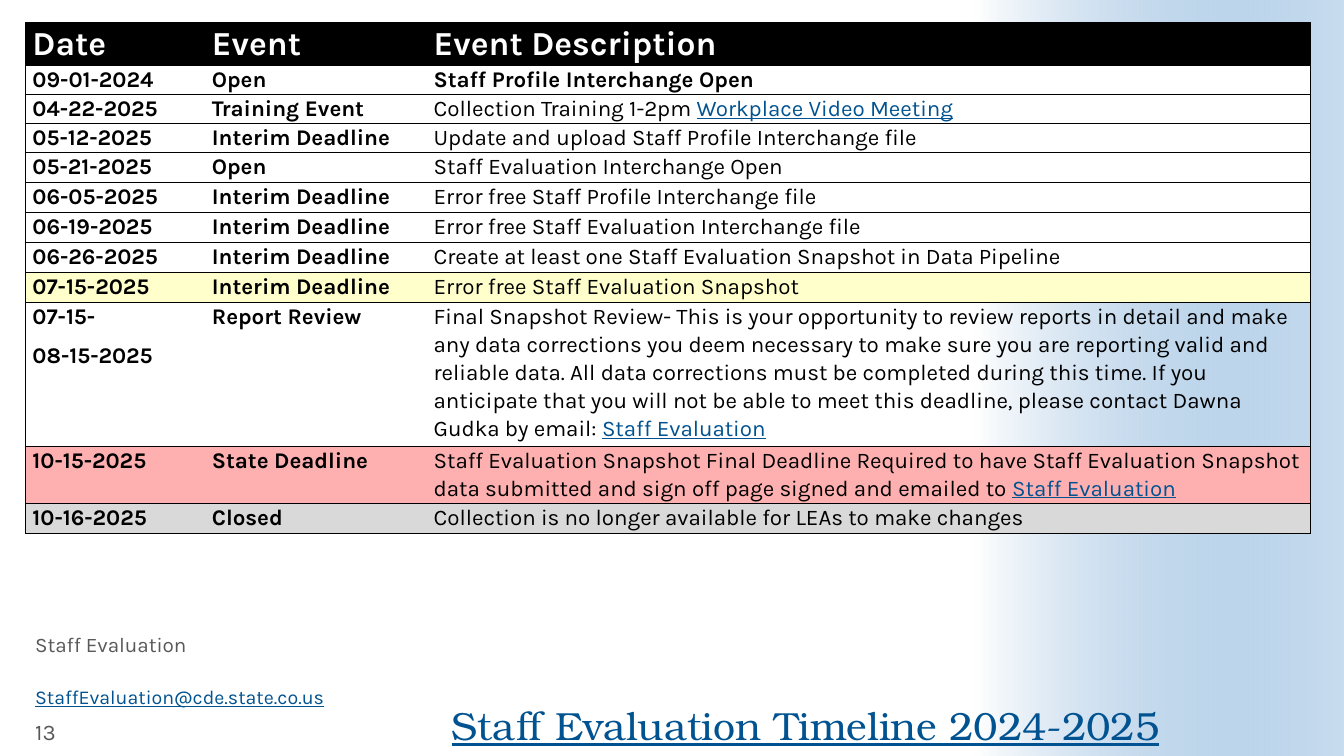
import pptx
import pptx.dml.color
import pptx.enum.shapes
import pptx.enum.text
import pptx.util
from lxml import etree
from pptx.oxml import parse_xml
from pptx.oxml.ns import qn

Pt = pptx.util.Pt
Anchor = pptx.enum.text.MSO_ANCHOR
Align = pptx.enum.text.PP_ALIGN

BODY_FONT, TITLE_FONT = "Karla", "TeX Gyre Bonum"
BLACK, WHITE, GREY, LINK = "000000", "FFFFFF", "595959", "005390"
YELLOW, PINK, SILVER = "FFFFCC", "FEB0B0", "D9D9D9"

HEADINGS = ("Date", "Event", "Event Description")
# date, event, description, linked words at the end, row fill, row height
EVENTS = [
    ("09-01-2024", "Open", "Staff Profile Interchange Open", "", WHITE, 20),
    ("04-22-2025", "Training Event", "Collection Training 1-2pm ",
     "Workplace Video Meeting", WHITE, 20),
    ("05-12-2025", "Interim Deadline",
     "Update and upload Staff Profile Interchange file", "", WHITE, 20.5),
    ("05-21-2025", "Open", "Staff Evaluation Interchange Open", "", WHITE, 21.5),
    ("06-05-2025", "Interim Deadline",
     "Error free Staff Profile Interchange file", "", WHITE, 21.5),
    ("06-19-2025", "Interim Deadline",
     "Error free Staff Evaluation Interchange file", "", WHITE, 21.5),
    ("06-26-2025", "Interim Deadline",
     "Create at least one Staff Evaluation Snapshot in Data Pipeline", "", WHITE, 21.5),
    ("07-15-2025", "Interim Deadline", "Error free Staff Evaluation Snapshot", "",
     YELLOW, 21.5),
    ("07-15-\n08-15-2025", "Report Review",
     "Final Snapshot Review- This is your opportunity to review reports in detail and "
     "make any data corrections you deem necessary to make sure you are reporting valid "
     "and reliable data. All data corrections must be completed during this time. If you "
     "anticipate that you will not be able to meet this deadline, please contact Dawna "
     "Gudka by email: ", "Staff Evaluation", None, 100),
    ("10-15-2025", "State Deadline",
     "Staff Evaluation Snapshot Final Deadline Required to have Staff Evaluation Snapshot "
     "data submitted and sign off page signed and emailed to ", "Staff Evaluation",
     PINK, 40),
    ("10-16-2025", "Closed", "Collection is no longer available for LEAs to make changes",
     "", SILVER, 21.5),
]
COLUMN_WIDTHS = (128.2, 158.4, 631.4)
HEADER_HEIGHT = 30.5
TABLE_LEFT, TABLE_TOP = 18, 16


def rgb(value):
    return pptx.dml.color.RGBColor.from_string(value)


def format_run(run, size, color, bold=False, underline=False, font=BODY_FONT):
    run.font.name = font
    run.font.size = Pt(size)
    run.font.bold = bold
    run.font.underline = underline
    run.font.color.rgb = rgb(color)


def add_text(slide, box, text, size, color, font=BODY_FONT, underline=False,
             anchor=Anchor.TOP, align=Align.LEFT, spacing=1.0, inset=None):
    shape = slide.shapes.add_textbox(*map(Pt, box))
    frame = shape.text_frame
    frame.word_wrap = True
    frame.vertical_anchor = anchor
    if inset is not None:
        frame.margin_left = frame.margin_right = Pt(inset)
        frame.margin_top = frame.margin_bottom = Pt(inset)
    frame.text = text
    paragraph = frame.paragraphs[0]
    paragraph.alignment = align
    paragraph.line_spacing = spacing
    format_run(paragraph.runs[0], size, color, underline=underline, font=font)


def add_side_gradient(slide):
    """Right-hand band fading from white to a translucent blue."""
    band = slide.shapes.add_shape(pptx.enum.shapes.MSO_SHAPE.RECTANGLE,
                                  Pt(558), Pt(138.2), Pt(540), Pt(263.6))
    band.rotation = 270
    band.shadow.inherit = False
    band.line.fill.background()
    gradient = parse_xml(
        '<a:gradFill xmlns:a="http://schemas.openxmlformats.org/drawingml/2006/main" '
        'rotWithShape="1"><a:gsLst>'
        '<a:gs pos="0"><a:srgbClr val="FFFFFF"/></a:gs>'
        '<a:gs pos="100000"><a:srgbClr val="488BC9"><a:alpha val="30000"/></a:srgbClr></a:gs>'
        '</a:gsLst><a:lin ang="5400000" scaled="0"/></a:gradFill>')
    band._element.spPr.find(qn("a:prstGeom")).addnext(gradient)


def set_borders(cell, visible_sides):
    properties = cell._tc.get_or_add_tcPr()
    for side in "LRTB":
        line = etree.SubElement(properties, qn("a:ln" + side), w=str(Pt(0.5)))
        if side in visible_sides:
            fill = etree.SubElement(line, qn("a:solidFill"))
            etree.SubElement(fill, qn("a:srgbClr"), val=BLACK)
        else:
            etree.SubElement(line, qn("a:noFill"))


def fill_cell(cell, column, text, link, fill, size, color, bold, space_after):
    cell.margin_left = cell.margin_right = Pt(5.2)
    cell.margin_top = cell.margin_bottom = 0
    set_borders(cell, {0: "LTB", 1: "TB", 2: "RTB"}[column])
    if fill:
        cell.fill.solid()
        cell.fill.fore_color.rgb = rgb(fill)
    else:
        cell.fill.background()
    cell.text_frame.text = text
    for paragraph in cell.text_frame.paragraphs:
        paragraph.line_spacing = 1.07
        paragraph.space_after = Pt(space_after)
        format_run(paragraph.runs[0], size, color, bold)
    if link:
        run = paragraph.add_run()
        run.text = link
        format_run(run, size, LINK, underline=True)


def add_timeline(slide):
    heights = [HEADER_HEIGHT] + [event[-1] for event in EVENTS]
    table = slide.shapes.add_table(
        len(heights), len(COLUMN_WIDTHS), Pt(TABLE_LEFT), Pt(TABLE_TOP),
        Pt(sum(COLUMN_WIDTHS)), Pt(sum(heights))).table
    table.first_row = table.horz_banding = False
    for column, width in zip(table.columns, COLUMN_WIDTHS):
        column.width = Pt(width)
    for row, height in zip(table.rows, heights):
        row.height = Pt(height)
    for column, heading in enumerate(HEADINGS):
        fill_cell(table.cell(0, column), column, heading, "", BLACK, 24, WHITE, True, 0)
    for row, (date, event, description, link, fill, _) in enumerate(EVENTS, 1):
        for column, text in enumerate((date, event, description)):
            bold = column < 2 or row == 1
            fill_cell(table.cell(row, column), column, text, link if column == 2 else "",
                      fill, 16, BLACK, bold, 8)


def main():
    presentation = pptx.Presentation()
    presentation.slide_width, presentation.slide_height = Pt(960), Pt(540)
    slide = presentation.slides.add_slide(presentation.slide_layouts[6])
    add_side_gradient(slide)
    add_text(slide, (306.7, 464.4, 521.3, 70.6), "Staff Evaluation Timeline 2024-2025",
             28, LINK, TITLE_FONT, True, Anchor.BOTTOM, Align.RIGHT, 0.9, 0)
    add_timeline(slide)
    add_text(slide, (18, 451.4, 288.7, 22.3), "Staff Evaluation", 14.8, GREY, spacing=0.8)
    add_text(slide, (18, 487, 280, 24), "StaffEvaluation@cde.state.co.us", 14, LINK,
             underline=True, anchor=Anchor.MIDDLE, spacing=0.9)
    add_text(slide, (18, 511.2, 61.2, 22.3), "13", 16, GREY, anchor=Anchor.MIDDLE)
    presentation.save("out.pptx")


if __name__ == "__main__":
    main()
